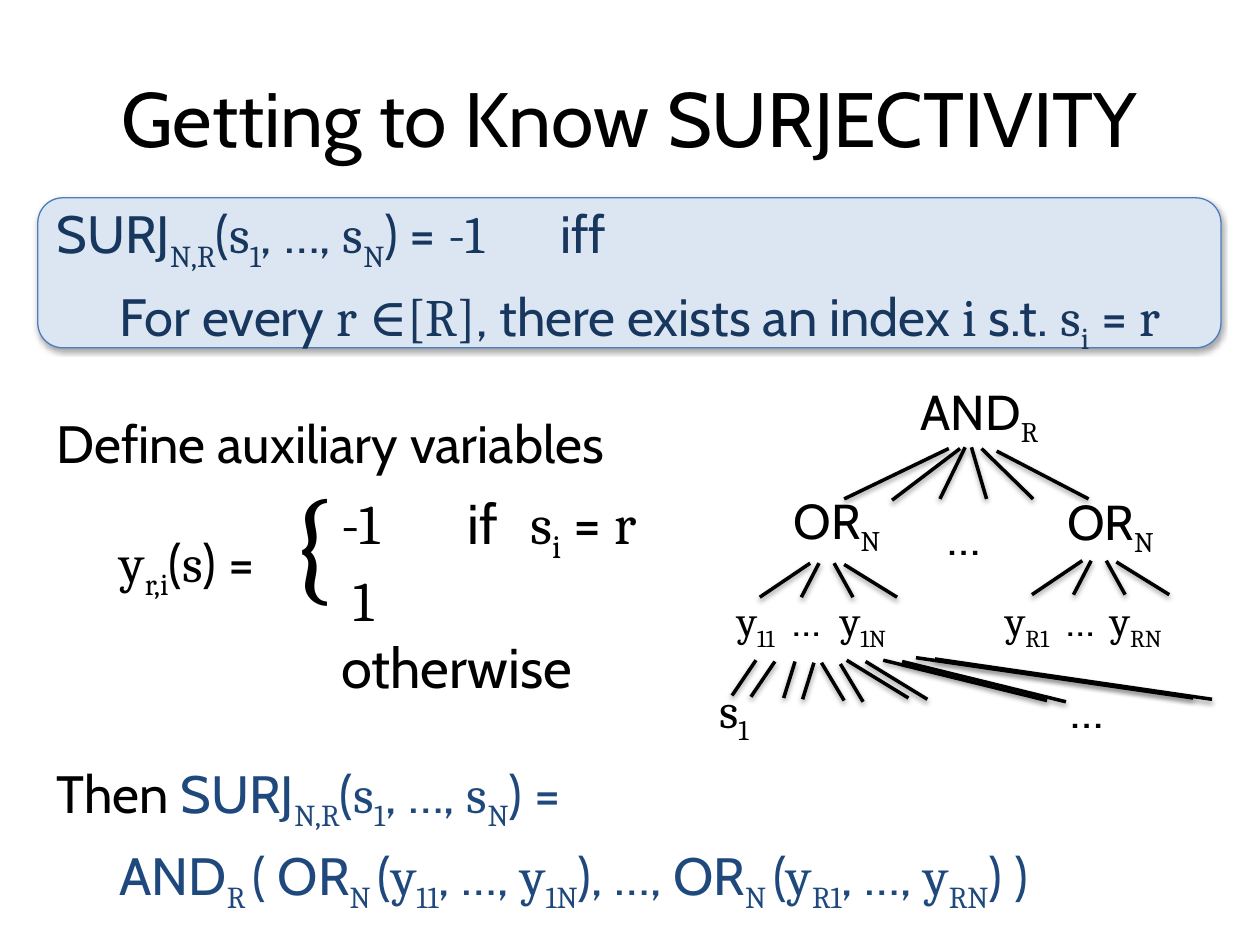
from lxml import etree
from pptx import Presentation
from pptx.dml.color import RGBColor
from pptx.enum.shapes import MSO_CONNECTOR, MSO_SHAPE
from pptx.enum.text import MSO_ANCHOR, PP_ALIGN
from pptx.oxml.ns import qn
from pptx.util import Inches, Pt

LINE = MSO_CONNECTOR.STRAIGHT
ROUND_RECT = MSO_SHAPE.ROUNDED_RECTANGLE
TOP, MIDDLE = MSO_ANCHOR.TOP, MSO_ANCHOR.MIDDLE
LEFT, CENTER = PP_ALIGN.LEFT, PP_ALIGN.CENTER

BLACK = RGBColor(0x00, 0x00, 0x00)
NAVY = RGBColor(0x17, 0x37, 0x5E)
BLUE = RGBColor(0x1F, 0x49, 0x7D)
PALE = RGBColor(0xDC, 0xE6, 0xF2)
EDGE = RGBColor(0x4B, 0x7E, 0xBC)
WORDS, MATH = "Cabin", "Cambria"


def add_shadow(shape, alpha, dist):
    effects = etree.SubElement(shape._element.spPr, qn("a:effectLst"))
    shadow = etree.SubElement(effects, qn("a:outerShdw"), blurRad=str(Pt(3.1)),
                              dist=str(Pt(dist)), dir="5400000", rotWithShape="0")
    color = etree.SubElement(shadow, qn("a:srgbClr"), val=str(BLACK))
    etree.SubElement(color, qn("a:alpha"), val=str(alpha * 1000))


def add_runs(p, text, size, color):
    """Add runs; |...| marks mathematics and ~...~ a subscript."""
    for i, part in enumerate(text.split("|")):
        for j, bit in enumerate(part.split("~")):
            if not bit:
                continue
            r = p.add_run()
            r.text = bit
            r.font.size = Pt(size)
            r.font.color.rgb = color
            r.font.name = MATH if i % 2 or j % 2 else WORDS
            if j % 2:
                r.font._element.set("baseline", "-25000")


def add_paragraph(tf, text, *, size, color=BLACK, before=0, indent=0, tabs=(),
                  align=LEFT, lead=""):
    """Add a paragraph, filling the empty first one; lead is black text ahead of it."""
    p = tf.paragraphs[0]
    if p.runs:
        p = tf.add_paragraph()
    p.alignment = align
    p.space_before = Pt(before)
    pPr = p._p.get_or_add_pPr()
    pPr.set("marL", str(Inches(indent)))
    if tabs:
        stops = etree.SubElement(pPr, qn("a:tabLst"))
        for pos in tabs:
            etree.SubElement(stops, qn("a:tab"), pos=str(Inches(pos)), algn="l")
    add_runs(p, lead, size, BLACK)
    add_runs(p, text, size, color)


def add_frame(shapes, x, y, w, h, anchor=TOP):
    tf = shapes.add_textbox(Inches(x), Inches(y), Inches(w), Inches(h)).text_frame
    tf.word_wrap = True
    tf.vertical_anchor = anchor
    return tf


def add_text(shapes, x, y, w, h, text, *, anchor=TOP, **fmt):
    add_paragraph(add_frame(shapes, x, y, w, h, anchor), text, **fmt)


def add_line(shapes, x1, y1, x2, y2):
    line = shapes.add_connector(LINE, Inches(x1), Inches(y1), Inches(x2), Inches(y2))
    line.line.color.rgb = BLACK
    line.line.width = Pt(2)
    add_shadow(line, 38, 1.6)


def add_panel(s, x, y, w, h):
    panel = s.shapes.add_shape(ROUND_RECT, Inches(x), Inches(y), Inches(w), Inches(h))
    panel.fill.solid()
    panel.fill.fore_color.rgb = PALE
    panel.line.color.rgb = EDGE
    panel.line.width = Pt(0.75)
    add_shadow(panel, 35, 1.8)


def add_body(s, x, y, w, h):
    tf = add_frame(s.shapes, x, y, w, h)
    surj = "SURJ~N,R~(|s~1~|, …, |s~N~|) ="
    add_paragraph(tf, surj + " |-1|\tiff", size=30, color=NAVY, before=6, tabs=[4])
    add_paragraph(tf, "For every |r ∈[R]|, there exists an index |i |s.t. |s~i~| = |r|",
                  size=30, color=NAVY, before=6, indent=0.5)
    add_paragraph(tf, "Define auxiliary variables", size=30, before=32)
    add_paragraph(tf, "|y~r,i~|(|s|) =", size=30, before=32, indent=0.5)
    add_paragraph(tf, surj, size=30, color=BLUE, before=91, lead="Then ")
    add_paragraph(tf, "AND~R ~( OR~N ~(|y~11~|, …, |y~1N~|), …, "
                  "OR~N ~(|y~R1~|, …, |y~RN~|) )",
                  size=30, color=BLUE, before=6, indent=0.5)


def add_cases(s, x, y):
    add_text(s.shapes, x, y, 0.6, 1.31, "|{|", size=72)
    tf = add_frame(s.shapes, x + 0.43, y + 0.21, 3.52, 1.6)
    add_paragraph(tf, "|-1|\tif\t|s~i~| = |r|", size=32, tabs=[1, 1.5])
    add_paragraph(tf, " |1|", size=32)
    add_paragraph(tf, "otherwise", size=32)


def add_tree(s, x, y):
    """Draw the AND of ORs with its top left corner at x, y."""
    shapes = s.shapes.add_group_shape().shapes

    def label(dx, dy, w, text, **fmt):
        add_text(shapes, x + dx, y + dy, w, 0.57, text, **{"size": 28, **fmt})

    def fan(lines, dx=0, dy=0):
        for x1, y1, x2, y2 in lines:
            add_line(shapes, x + x1 + dx, y + y1 + dy, x + x2 + dx, y + y2 + dy)

    and_fan = [(1.93, 0.56, 1.1, 0.96), (2.02, 0.56, 1.48, 0.97),
               (2.06, 0.55, 1.86, 0.96), (2.11, 0.55, 2.23, 0.96),
               (2.19, 0.56, 2.6, 0.96), (2.31, 0.58, 3.04, 0.96)]
    or_fan = [(0.83, 1.47, 0.43, 1.74), (0.9, 1.47, 0.76, 1.74),
              (1.02, 1.47, 1.17, 1.74), (1.1, 1.48, 1.52, 1.74)]
    input_fan = [(0.4, 2.24, 0.21, 2.52), (0.71, 2.25, 0.62, 2.54),
                 (0.92, 2.26, 1.1, 2.56), (1.12, 2.24, 1.61, 2.54),
                 (1.41, 2.24, 2.71, 2.56), (1.67, 2.22, 3.87, 2.54)]
    fan(and_fan)
    fan(or_fan)
    fan(or_fan, 2.16, -0.02)
    fan(input_fan)
    fan(input_fan, 0.15, 0.01)

    label(1.61, -0.02, 1.43, "AND~R~")
    label(0.6, 0.84, 1.22, "OR~N~")
    label(1.82, 0.97, 0.68, "…")
    label(2.77, 0.85, 1.22, "OR~N~")
    label(0.15, 1.67, 1.85, "|y~11~|\t…\t|y~1N~|", size=24, tabs=[0.44, 0.82])
    label(2.28, 1.67, 2, "|y~R1~|\t…\t|y~RN~|", size=24, tabs=[0.49, 0.83])
    label(0.01, 2.34, 4, "|s~1~|\t…", tabs=[2.79])


def main():
    prs = Presentation()
    prs.slide_width, prs.slide_height = Inches(10), Inches(7.5)
    s = prs.slides.add_slide(prs.slide_layouts[6])
    add_panel(s, 0.3, 1.57, 9.39, 1.19)
    add_text(s.shapes, 0.5, 0.3, 9, 1.25, "Getting to Know SURJECTIVITY",
             size=44, align=CENTER, anchor=MIDDLE)
    add_body(s, 0.35, 1.55, 9.34, 5.49)
    add_cases(s, 2.18, 3.62)
    add_tree(s, 5.6, 3)
    prs.save("out.pptx")


if __name__ == "__main__":
    main()
